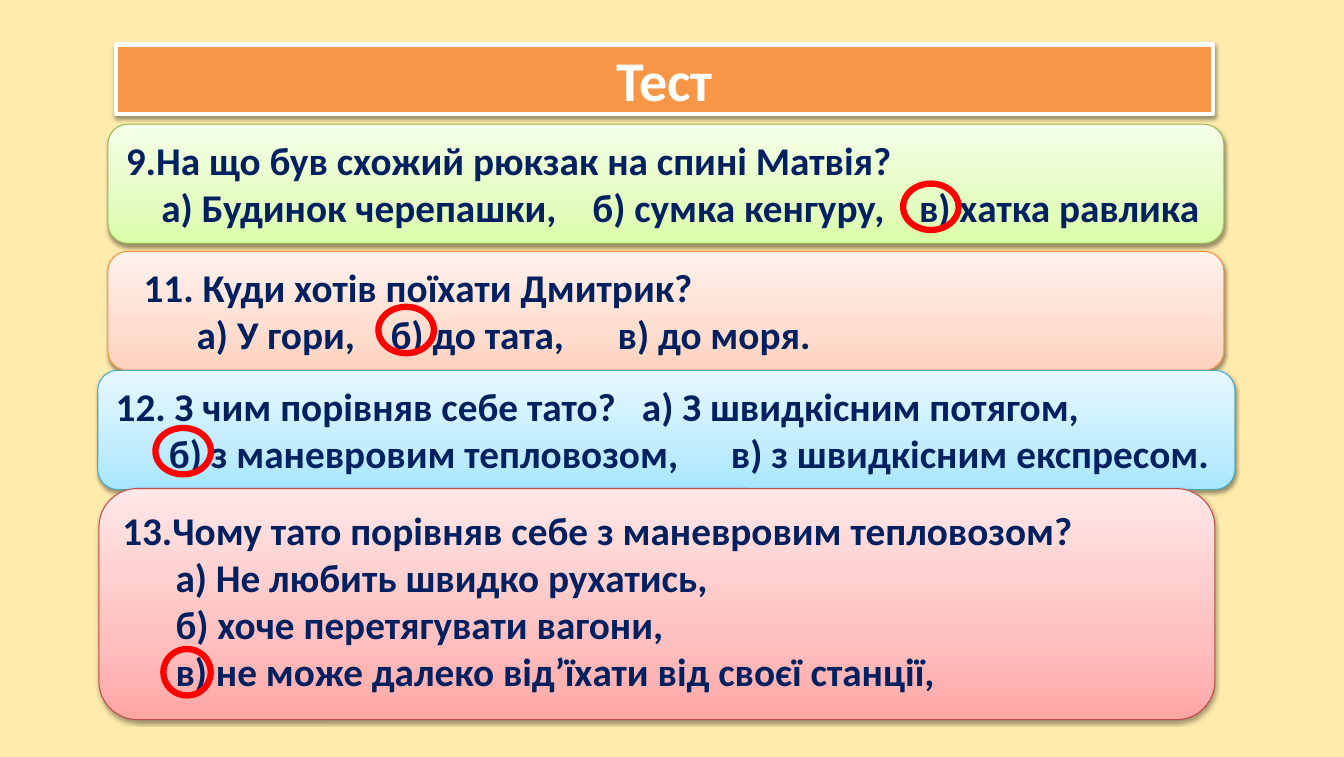
from copy import deepcopy
from dataclasses import dataclass

from lxml.etree import SubElement
from pptx import Presentation
from pptx.dml.color import RGBColor
from pptx.enum.shapes import MSO_SHAPE as SHAPE
from pptx.enum.text import MSO_ANCHOR as ANCHOR, MSO_AUTO_SIZE as AUTOSIZE, PP_ALIGN as ALIGN
from pptx.oxml.ns import qn
from pptx.util import Pt

COLORS = {
    "background": "FFEBAB", "title": "F79646", "white": "FFFFFF",
    "text": "002060", "mark": "FF0000", "shadow": "000000",
}
GRADIENTS = {
    "green": ("DAFDA7", "E4FCC2", "F5FFE7", "98B955"),
    "orange": ("FFD2BD", "FFDED0", "FFF2ED", "F69240"),
    "blue": ("A7E6FF", "C1EDFF", "E7F8FF", "46AAC5"),
    "red": ("FFA6A5", "FFC0BF", "FFE7E7", "BF4C48"),
}
STOPS = (0, 0.35, 1)
MARGINS = {"margin_left": Pt(8.64), "margin_right": Pt(8.64),
           "margin_top": Pt(4.32), "margin_bottom": Pt(4.32), "word_wrap": True}


@dataclass
class Line:
    text: str
    tabs: tuple[float, ...] = ()


@dataclass
class Card:
    left: float
    top: float
    width: float
    height: float
    gradient: str
    lines: list[Line]


@dataclass
class Mark:
    left: float
    top: float
    width: float = 39.6
    height: float = 33.1


CARDS = [
    Card(77, 88.6, 796.3, 85, "green", [
        Line("9.На що був схожий рюкзак на спині Матвія?"),
        Line("\tа) Будинок черепашки,\tб) сумка кенгуру,\tв) хатка равлика", (25.3, 333, 566)),
    ]),
    Card(77, 179.3, 796.3, 85, "orange", [
        Line("\t11. Куди хотів поїхати Дмитрик?", (12.7,)),
        Line("\tа) У гори,\tб) до тата,\tв) до моря.", (50.6, 189, 351)),
    ]),
    Card(69.8, 264.2, 811.4, 85, "blue", [
        Line("12. З чим порівняв себе тато?\tа) З швидкісним потягом,", (375.5,)),
        Line("\tб) з маневровим тепловозом,\tв) з швидкісним експресом.", (38, 439)),
    ]),
    Card(70.6, 348.5, 796.3, 164.9, "red", [
        Line("13.Чому тато порівняв себе з маневровим тепловозом?"),
        Line("\tа) Не любить швидко рухатись,", (38,)),
        Line("\tб) хоче перетягувати вагони,", (38,)),
        Line("\tв) не може далеко від’їхати від своєї станції,", (38,)),
    ]),
]
MARKS = [Mark(644.4, 131), Mark(270, 218.9), Mark(110.9, 305.3), Mark(116.6, 463, 33.8)]


def rgb(value: str) -> RGBColor:
    return RGBColor.from_string(value)


def apply(target, values: dict) -> None:
    for name, value in values.items():
        setattr(target, name, value)


def set_line(s, color: str, width: float) -> None:
    s.line.color.rgb = rgb(color)
    s.line.width = Pt(width)


def add_shadow(s) -> None:
    s.shadow.inherit = False
    effects = s._element.spPr.find(qn("a:effectLst"))
    shadow = SubElement(effects, qn("a:outerShdw"), blurRad=str(Pt(3.1)),
                        dist=str(Pt(1.6)), dir="5400000", rotWithShape="0")
    color = SubElement(shadow, qn("a:srgbClr"), val=COLORS["shadow"])
    SubElement(color, qn("a:alpha"), val="38000")


def fill_gradient(s, colors: tuple[str, ...]) -> None:
    s.fill.gradient()
    s.fill.gradient_angle = 90
    stops = s._element.spPr.find(qn("a:gradFill")).find(qn("a:gsLst"))
    stops.append(deepcopy(stops[0]))
    for stop, position, color in zip(s.fill.gradient_stops, STOPS, colors):
        stop.position = position
        stop.color.rgb = rgb(color)


def add_text(p, text: str, size: float, color: str) -> None:
    r = p.add_run()
    r.text = text
    apply(r.font, {"name": "Calibri", "size": Pt(size), "bold": True})
    r.font.color.rgb = rgb(color)


def add_tabs(p, tabs: tuple[float, ...]) -> None:
    tab_list = SubElement(p._p.get_or_add_pPr(), qn("a:tabLst"))
    for position in tabs:
        SubElement(tab_list, qn("a:tab"), pos=str(Pt(position)), algn="l")


def add_card(slide, card: Card) -> None:
    s = slide.shapes.add_shape(SHAPE.ROUNDED_RECTANGLE, Pt(card.left), Pt(card.top),
                               Pt(card.width), Pt(card.height))
    *colors, border = GRADIENTS[card.gradient]
    fill_gradient(s, tuple(colors))
    set_line(s, border, 0.75)
    add_shadow(s)
    tf = s.text_frame
    apply(tf, MARGINS | {"vertical_anchor": ANCHOR.TOP,
                         "auto_size": AUTOSIZE.SHAPE_TO_FIT_TEXT})
    for i, line in enumerate(card.lines):
        p = tf.add_paragraph() if i else tf.paragraphs[0]
        p.alignment = ALIGN.LEFT
        if line.tabs:
            add_tabs(p, line.tabs)
        add_text(p, line.text, 28, COLORS["text"])


def add_mark(slide, mark: Mark) -> None:
    s = slide.shapes.add_shape(SHAPE.OVAL, Pt(mark.left), Pt(mark.top),
                               Pt(mark.width), Pt(mark.height))
    s.fill.background()
    set_line(s, COLORS["mark"], 4.5)
    s.shadow.inherit = False


def format_title(s) -> None:
    apply(s, {"left": Pt(82.8), "top": Pt(31.7), "width": Pt(782.6), "height": Pt(49.7)})
    s.fill.solid()
    s.fill.fore_color.rgb = rgb(COLORS["title"])
    set_line(s, COLORS["white"], 3)
    add_shadow(s)
    tf = s.text_frame
    apply(tf, MARGINS | {"vertical_anchor": ANCHOR.MIDDLE, "auto_size": AUTOSIZE.NONE})
    p = tf.paragraphs[0]
    p.alignment = ALIGN.CENTER
    add_text(p, "Тест", 40, COLORS["white"])


def main() -> None:
    prs = Presentation()
    apply(prs, {"slide_width": Pt(959), "slide_height": Pt(540)})
    slide = prs.slides.add_slide(prs.slide_layouts[5])
    slide.background.fill.solid()
    slide.background.fill.fore_color.rgb = rgb(COLORS["background"])
    format_title(slide.shapes.title)
    for card in CARDS:
        add_card(slide, card)
    for mark in MARKS:
        add_mark(slide, mark)
    prs.save("out.pptx")


if __name__ == "__main__":
    main()
